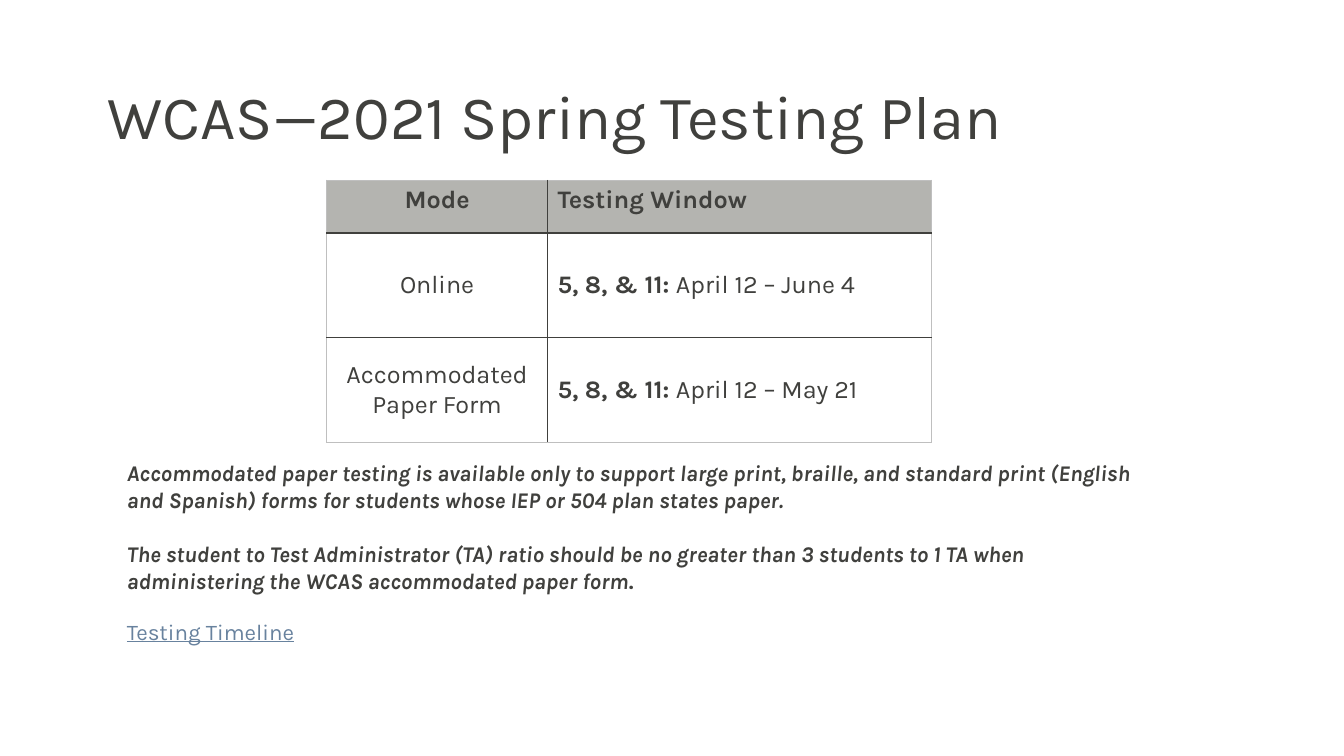
import pptx
import pptx.dml.color
import pptx.enum.text
import pptx.oxml
import pptx.oxml.ns
import pptx.util

FONT = "Karla"
COLORS = {"ink": "40403D", "header": "B4B4B0", "frame": "BFBFBF",
          "paper": "FFFFFF", "link": "68829E"}
Inches, Pt = pptx.util.Inches, pptx.util.Pt
PP_ALIGN, MSO_ANCHOR = pptx.enum.text.PP_ALIGN, pptx.enum.text.MSO_ANCHOR


def write(paragraph, pieces, size, color="ink"):
    """Fill a paragraph with (text, bold, italic) pieces."""
    for words, bold, italic in pieces:
        run = paragraph.add_run()
        run.text = words
        run.font.name, run.font.size = FONT, Pt(size)
        run.font.bold, run.font.italic = bold, italic
        run.font.color.rgb = pptx.dml.color.RGBColor.from_string(COLORS[color])


def add_text(left, top, width, height):
    frame = slide.shapes.add_textbox(
        Inches(left), Inches(top), Inches(width), Inches(height)).text_frame
    frame.word_wrap = True
    return frame


deck = pptx.Presentation()
deck.slide_width, deck.slide_height = Inches(13.33), Inches(7.5)
slide = deck.slides.add_slide(deck.slide_layouts[6])

# Title
title = add_text(0.97, 0.46, 11.5, 1.45)
title.vertical_anchor = MSO_ANCHOR.MIDDLE
title.paragraphs[0].line_spacing = 0.9
write(title.paragraphs[0], [("WCAS—2021 Spring Testing Plan", False, False)], 44)

# Testing windows by mode
grades = ("5, 8, & 11: ", True, False)
plan = [
    [[("Mode", True, False)], [("Testing Window", True, False)]],
    [[("Online", False, False)], [grades, ("April 12 – June 4", False, False)]],
    [[("Accommodated Paper Form", False, False)],
     [grades, ("April 12 – May 21", False, False)]],
]
column_widths = [2.19, 3.81]
row_heights = [0.52, 1.04, 1.04]
windows = slide.shapes.add_table(
    len(row_heights), len(column_widths), Inches(3.24), Inches(1.79),
    Inches(sum(column_widths)), Inches(sum(row_heights))).table
for column, width in zip(windows.columns, column_widths):
    column.width = Inches(width)
for row, height in zip(windows.rows, row_heights):
    row.height = Inches(height)

frame_line = ("frame", 1)
column_line = ("ink", 1.5)
row_lines = [frame_line, ("ink", 1.5), ("ink", 1), frame_line]
column_lines = [frame_line, column_line, frame_line]
for r, entries in enumerate(plan):
    for c, pieces in enumerate(entries):
        cell = windows.cell(r, c)
        cell.fill.solid()
        cell.fill.fore_color.rgb = pptx.dml.color.RGBColor.from_string(
            COLORS["header" if r == 0 else "paper"])
        cell.vertical_anchor = MSO_ANCHOR.TOP if r == 0 else MSO_ANCHOR.MIDDLE
        entry = cell.text_frame.paragraphs[0]
        entry.alignment = PP_ALIGN.CENTER if c == 0 else PP_ALIGN.LEFT
        write(entry, pieces, 18)
        borders = {"lnL": column_lines[c], "lnR": column_lines[c + 1],
                   "lnT": row_lines[r], "lnB": row_lines[r + 1]}
        for place, (side, (color, weight)) in enumerate(borders.items()):
            cell._tc.get_or_add_tcPr().insert(place, pptx.oxml.parse_xml(
                f'<a:{side} {pptx.oxml.ns.nsdecls("a")} w="{Pt(weight)}">'
                f'<a:solidFill><a:srgbClr val="{COLORS[color]}"/></a:solidFill>'
                f'</a:{side}>'))

# Accommodation notes
notes = add_text(1.16, 4.51, 10.17, 1.45)
write(notes.paragraphs[0], [(
    "Accommodated paper testing is available only to support large print, "
    "braille, and standard print (English and Spanish) forms for students "
    "whose IEP or 504 plan states paper.", True, True)], 16)
ratio = notes.add_paragraph()
ratio.space_before = Pt(19)
write(ratio, [(
    "The student to Test Administrator (TA) ratio should be no greater than "
    "3 students to 1 TA when administering the WCAS accommodated paper form",
    True, True), (".", True, False)], 16)

# Timeline reference
timeline = add_text(1.16, 6.08, 1.87, 0.37).paragraphs[0]
write(timeline, [("Testing Timeline", False, False)], 16, "link")
timeline.runs[0].font.underline = True

deck.save("out.pptx")
